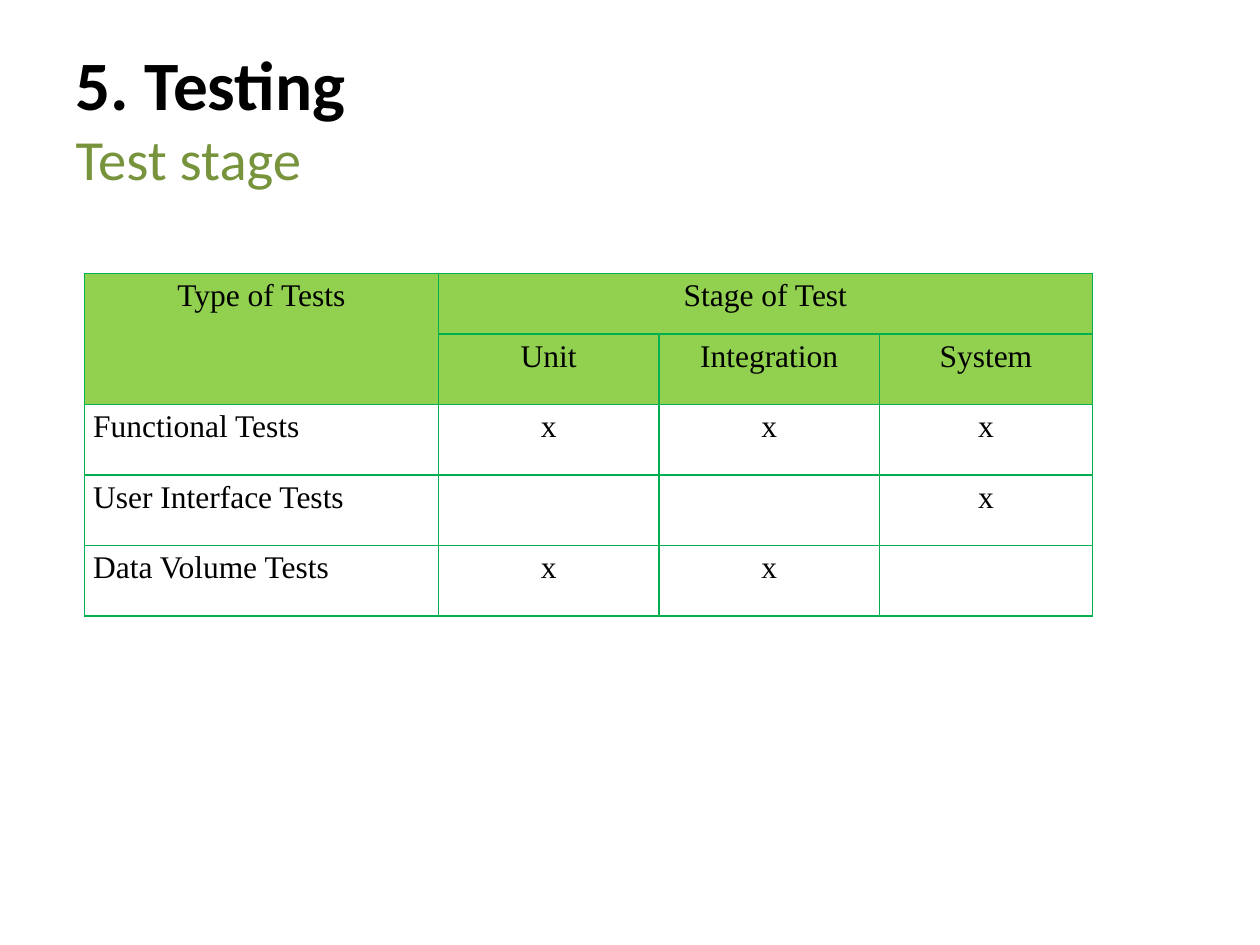
from dataclasses import dataclass
from lxml import etree
from pptx import Presentation
from pptx import util as u
from pptx.dml.color import RGBColor
from pptx.enum import text
from pptx.oxml import ns


@dataclass(frozen=True)
class Theme:
    ink: str = "000000"
    sub: str = "77933C"
    head: str = "92D050"
    edge: str = "00B050"
    sans: str = "Calibri"
    serif: str = "Times New Roman"
    big: float = 39.6
    mid: float = 32.4
    body: float = 18
    rule: float = 1


look = Theme()


def add_run(para, words, face, size, color, bold=False):
    run = para.add_run()
    run.text = words
    run.font.name = face
    run.font.size = u.Pt(size)
    run.font.bold = bold
    run.font.color.rgb = RGBColor.from_string(color)


def add_edges(cell):
    """Draw a solid line on all four sides; call before setting the fill."""
    props = cell._tc.get_or_add_tcPr()
    for side in ("lnL", "lnR", "lnT", "lnB"):
        line = etree.SubElement(props, ns.qn("a:" + side), w=str(u.Pt(look.rule)))
        fill = etree.SubElement(line, ns.qn("a:solidFill"))
        etree.SubElement(fill, ns.qn("a:srgbClr"), val=look.edge)


deck = Presentation()
deck.slide_width, deck.slide_height = u.Inches(10), u.Inches(7.5)
slide = deck.slides.add_slide(deck.slide_layouts[5])

# Title
title = slide.shapes.title
title.left, title.top = u.Inches(0.5), u.Inches(0.3)
title.width, title.height = u.Inches(9), u.Inches(1.25)
frame = title.text_frame
frame.vertical_anchor = text.MSO_ANCHOR.MIDDLE
para = frame.paragraphs[0]
para.alignment = text.PP_ALIGN.LEFT
add_run(para, "5. Testing", look.sans, look.big, look.ink, True)
para.add_line_break()
add_run(para, "Test stage", look.sans, look.mid, look.sub)

# Table of test types by stage
rows = [
    ["Type of Tests", "Stage of Test", "", ""],
    ["", "Unit", "Integration", "System"],
    ["Functional Tests", "x", "x", "x"],
    ["User Interface Tests", "", "", "x"],
    ["Data Volume Tests", "x", "x", ""],
]
wide = [2.81, 1.75, 1.75, 1.69]
high = [0.48] + [0.56] * 4
heads = 2

table = slide.shapes.add_table(
    len(rows), len(wide), u.Inches(0.67), u.Inches(2.17),
    u.Inches(sum(wide)), u.Inches(sum(high))).table
table.first_row = table.horz_banding = False
for col, size in zip(table.columns, wide):
    col.width = u.Inches(size)
for row, size in zip(table.rows, high):
    row.height = u.Inches(size)

for r, row in enumerate(rows):
    for c, words in enumerate(row):
        cell = table.cell(r, c)
        add_edges(cell)
        if r < heads:
            cell.fill.solid()
            cell.fill.fore_color.rgb = RGBColor.from_string(look.head)
        else:
            cell.fill.background()
        cell.margin_left = cell.margin_right = u.Inches(0.07)
        cell.margin_top = cell.margin_bottom = 0
        if words:
            para = cell.text_frame.paragraphs[0]
            label = c == 0 and r >= heads
            para.alignment = text.PP_ALIGN.LEFT if label else text.PP_ALIGN.CENTER
            para.line_spacing = 1.15
            add_run(para, words, look.serif, look.body, look.ink)

table.cell(0, 0).merge(table.cell(1, 0))
table.cell(0, 1).merge(table.cell(0, 3))

deck.save("out.pptx")
